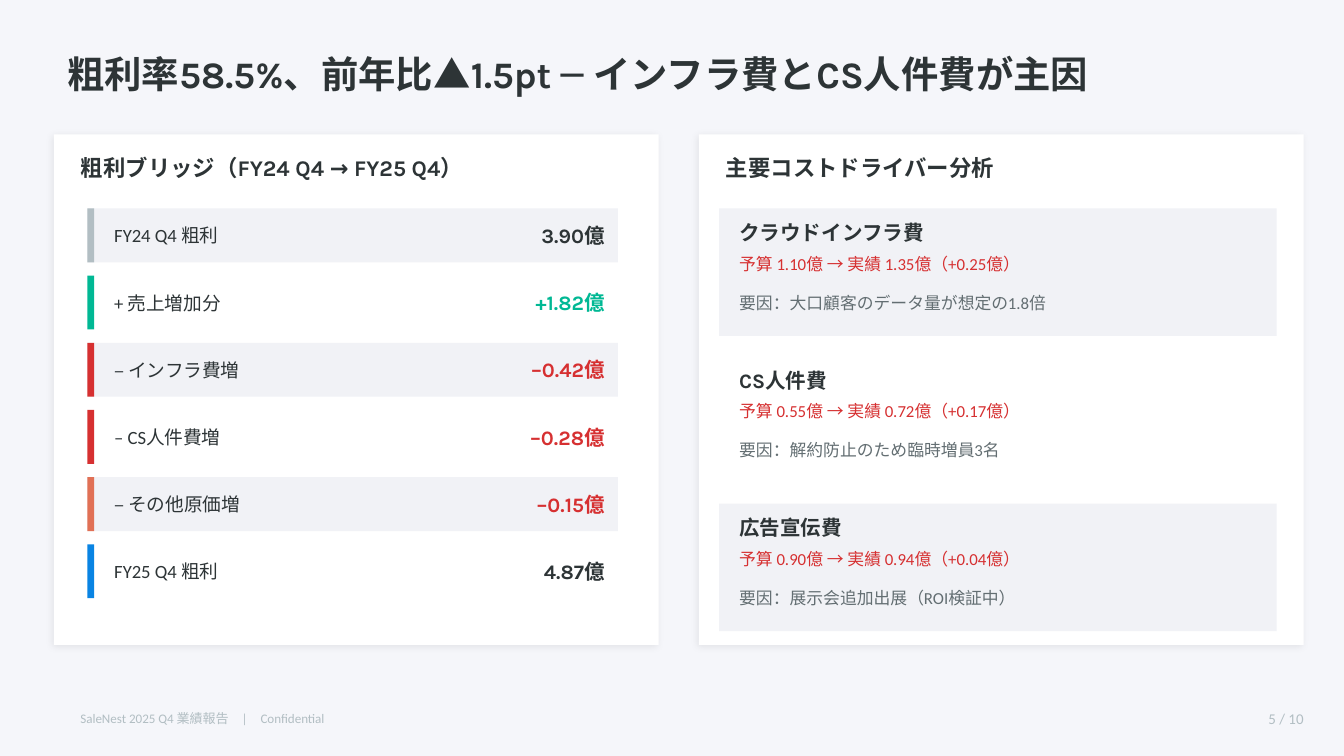
from dataclasses import dataclass

import lxml.etree
import pptx
import pptx.dml.color
import pptx.enum.shapes
import pptx.enum.text
import pptx.oxml.ns
import pptx.util

Cm = pptx.util.Cm
RGB = pptx.dml.color.RGBColor
Align = pptx.enum.text.PP_ALIGN
qn = pptx.oxml.ns.qn

PAGE = RGB(0xF5, 0xF6, 0xFA)
WHITE = RGB(0xFF, 0xFF, 0xFF)
BAND = RGB(0xF1, 0xF2, 0xF6)
INK = RGB(0x2D, 0x34, 0x36)
GREY = RGB(0x63, 0x6E, 0x72)
PALE = RGB(0xB2, 0xBE, 0xC3)
GREEN = RGB(0x00, 0xB8, 0x94)
RED = RGB(0xD6, 0x30, 0x31)
CORAL = RGB(0xE1, 0x70, 0x55)
BLUE = RGB(0x09, 0x84, 0xE3)

HEAD, BODY = "Karla", "Calibri"
TOP = 3.94  # first item in both cards


@dataclass
class Card:
    left: float
    title: str


@dataclass
class Step:
    label: str
    value: str
    bar: RGB
    color: RGB


@dataclass
class Driver:
    name: str
    change: str
    cause: str


CARDS = [
    Card(1.02, "粗利ブリッジ（FY24 Q4 → FY25 Q4）"),
    Card(13.21, "主要コストドライバー分析"),
]
STEPS = [
    Step("FY24 Q4 粗利", "3.90億", PALE, INK),
    Step("+ 売上増加分", "+1.82億", GREEN, GREEN),
    Step("– インフラ費増", "–0.42億", RED, RED),
    Step("– CS人件費増", "–0.28億", RED, RED),
    Step("– その他原価増", "–0.15億", CORAL, RED),
    Step("FY25 Q4 粗利", "4.87億", BLUE, INK),
]
DRIVERS = [
    Driver("クラウドインフラ費", "予算 1.10億 → 実績 1.35億（+0.25億）",
           "要因：大口顧客のデータ量が想定の1.8倍"),
    Driver("CS人件費", "予算 0.55億 → 実績 0.72億（+0.17億）",
           "要因：解約防止のため臨時増員3名"),
    Driver("広告宣伝費", "予算 0.90億 → 実績 0.94億（+0.04億）",
           "要因：展示会追加出展（ROI検証中）"),
]


def add_rect(slide, x: float, y: float, w: float, h: float, fill: RGB):
    rect = slide.shapes.add_shape(
        pptx.enum.shapes.MSO_SHAPE.RECTANGLE, Cm(x), Cm(y), Cm(w), Cm(h))
    rect.shadow.inherit = False
    rect.fill.solid()
    rect.fill.fore_color.rgb = fill
    rect.line.fill.background()
    return rect


def add_text(slide, x: float, y: float, w: float, h: float, text: str,
             size: float, color: RGB, font: str = BODY,
             align: Align = Align.LEFT, inset: bool = False) -> None:
    frame = slide.shapes.add_textbox(Cm(x), Cm(y), Cm(w), Cm(h)).text_frame
    frame.word_wrap = True
    frame.vertical_anchor = pptx.enum.text.MSO_ANCHOR.MIDDLE
    if not inset:
        frame.margin_left = frame.margin_right = 0
        frame.margin_top = frame.margin_bottom = 0
    para = frame.paragraphs[0]
    para.text = text
    para.alignment = align
    para.font.size = pptx.util.Pt(size)
    para.font.name = font
    para.font.bold = font == HEAD
    para.font.color.rgb = color


def add_shade(shape) -> None:
    """Give the shape a faint outer shadow."""
    sub = lxml.etree.SubElement
    effects = shape._element.spPr.find(qn("a:effectLst"))
    shade = sub(effects, qn("a:outerShdw"), blurRad=str(pptx.util.Pt(4)),
                dist=str(pptx.util.Pt(1)), dir=str(135 * 60000),
                algn="bl", rotWithShape="0")
    black = sub(shade, qn("a:srgbClr"), val="000000")
    sub(black, qn("a:alpha"), val="8000")


def band(index: int) -> RGB:
    return WHITE if index % 2 else BAND


def add_card(slide, card: Card) -> None:
    add_shade(add_rect(slide, card.left, 2.54, 11.43, 9.65, WHITE))
    add_text(slide, card.left + 0.51, 2.79, 10.41, 0.76,
             card.title, 12, INK, HEAD)


def add_step(slide, index: int, step: Step) -> None:
    y = TOP + index * 1.27
    add_rect(slide, 1.65, y, 10.03, 1.02, band(index))
    add_rect(slide, 1.65, y, 0.13, 1.02, step.bar)
    add_text(slide, 2.16, y + 0.13, 6.35, 0.76, step.label, 10, INK)
    add_text(slide, 8.38, y + 0.13, 3.05, 0.76, step.value, 11,
             step.color, HEAD, Align.RIGHT)


def add_driver(slide, index: int, driver: Driver) -> None:
    y = TOP + index * 2.79
    add_rect(slide, 13.59, y, 10.54, 2.41, band(index))
    add_text(slide, 13.97, y + 0.13, 5.08, 0.64, driver.name, 11, INK, HEAD)
    add_text(slide, 13.97, y + 0.76, 9.65, 0.56, driver.change, 9, RED)
    add_text(slide, 13.97, y + 1.4, 9.65, 0.76, driver.cause, 9, GREY)


def main() -> None:
    deck = pptx.Presentation()
    deck.slide_width, deck.slide_height = Cm(25.4), Cm(14.29)
    slide = deck.slides.add_slide(deck.slide_layouts[6])
    slide.background.fill.solid()
    slide.background.fill.fore_color.rgb = PAGE

    # Title
    add_text(slide, 1.27, 0.76, 22.86, 1.27,
             "粗利率58.5%、前年比▲1.5pt ─ インフラ費とCS人件費が主因",
             20, INK, HEAD)

    # Cards and their items
    for card in CARDS:
        add_card(slide, card)
    for index, step in enumerate(STEPS):
        add_step(slide, index, step)
    for index, driver in enumerate(DRIVERS):
        add_driver(slide, index, driver)

    # Footer
    add_text(slide, 23.11, 13.26, 1.78, 0.64, "5 / 10", 8, PALE,
             align=Align.RIGHT, inset=True)
    add_text(slide, 1.27, 13.26, 10.16, 0.64,
             "SaleNest 2025 Q4 業績報告　|　Confidential", 7, PALE, inset=True)

    deck.save("out.pptx")


if __name__ == "__main__":
    main()
